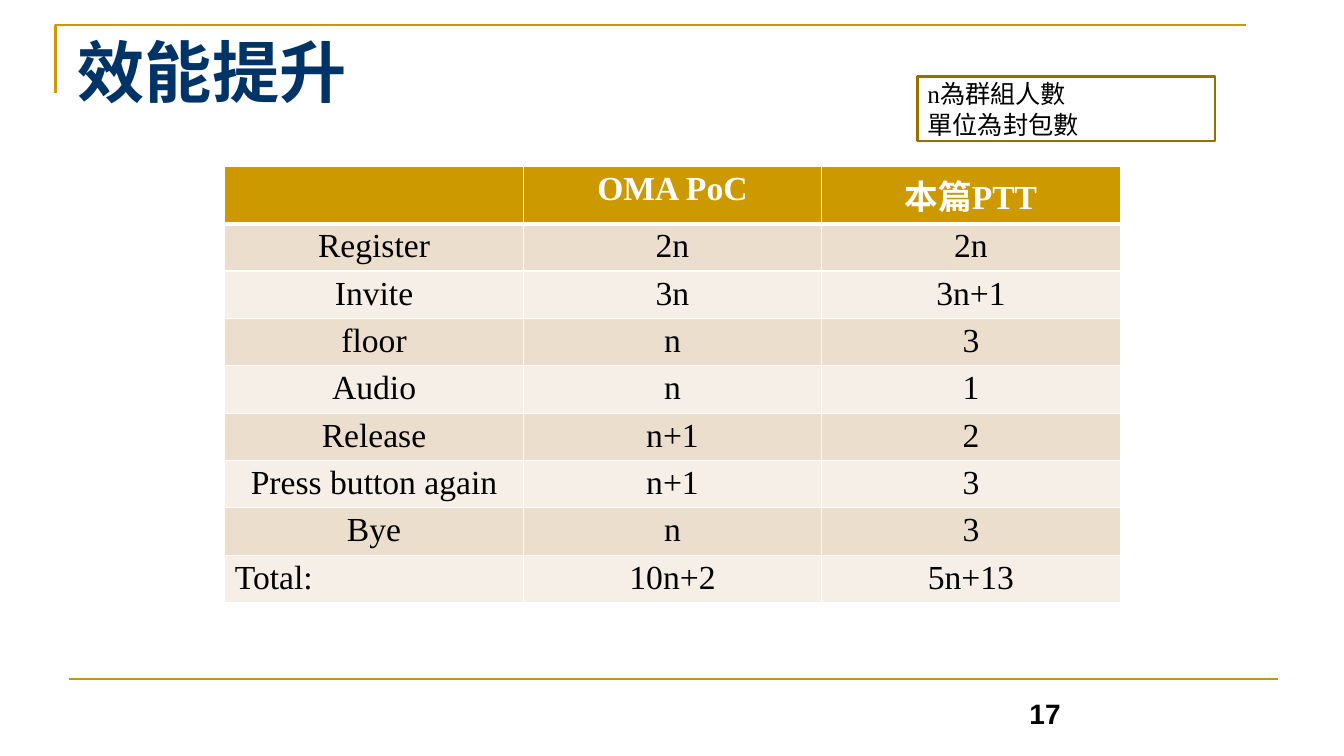
import pptx
import pptx.util
import pptx.oxml
import pptx.oxml.ns
import pptx.dml.color
import pptx.enum.shapes
import pptx.enum.text
from dataclasses import dataclass

Inches, Pt = pptx.util.Inches, pptx.util.Pt
Align, Anchor = pptx.enum.text.PP_ALIGN, pptx.enum.text.MSO_ANCHOR
qn = pptx.oxml.ns.qn


@dataclass(frozen=True)
class Theme:
    gold: str = "CC9900"
    rule: str = "C89600"
    note_line: str = "977100"
    navy: str = "003366"
    black: str = "000000"
    white: str = "FFFFFF"
    bands: tuple = ("ECDECC", "F6EFE7")
    cjk: str = "Noto Sans CJK SC"
    serif: str = "Times New Roman"
    sans: str = "Arial"
    title_size: int = 48
    table_size: int = 24
    number_size: int = 20
    note_size: int = 18


def rgb(value):
    return pptx.dml.color.RGBColor.from_string(value)


def sub(parent, tag, **attributes):
    child = parent.makeelement(qn(tag), attributes)
    parent.append(child)
    return child


class SlideBuilder:
    def __init__(self, presentation, theme):
        self.theme = theme
        self.slide = presentation.slides.add_slide(presentation.slide_layouts[5])
        self.shapes = self.slide.shapes

    def set_text(self, frame, text, size, font, color, bold=False, align=Align.LEFT):
        frame.text = text
        for paragraph in frame.paragraphs:
            paragraph.alignment = align
            for run in paragraph.runs:
                run.font.size = Pt(size)
                run.font.bold = bold
                run.font.name = font
                run.font.color.rgb = rgb(color)
                sub(run._r.get_or_add_rPr(), "a:ea", typeface=self.theme.cjk)

    def title(self, text, left, top, width, height):
        title = self.shapes.title
        title.left, title.top = Inches(left), Inches(top)
        title.width, title.height = Inches(width), Inches(height)
        frame = title.text_frame
        frame.word_wrap = True
        frame.vertical_anchor = Anchor.TOP
        frame.margin_top = 0
        self.set_text(frame, text, self.theme.title_size, self.theme.cjk,
                      self.theme.navy, bold=True)

    def corner(self, points, color, width):
        start, *rest = [(Inches(x), Inches(y)) for x, y in points]
        builder = self.shapes.build_freeform(*start)
        builder.add_line_segments(rest, close=False)
        corner = builder.convert_to_shape()
        corner.shadow.inherit = False
        corner.fill.background()
        corner.line.color.rgb = rgb(color)
        corner.line.width = Pt(width)

    def line(self, start, end, color, width):
        line = self.shapes.add_connector(
            pptx.enum.shapes.MSO_CONNECTOR.STRAIGHT, *map(Inches, start + end))
        line.line.color.rgb = rgb(color)
        line.line.width = Pt(width)
        sub(line._element.spPr, "a:effectLst")

    def box(self, text, left, top, width, height, size, font, fill=None,
            outline=None, bold=False, align=Align.LEFT):
        box = self.shapes.add_shape(
            pptx.enum.shapes.MSO_SHAPE.RECTANGLE,
            *map(Inches, (left, top, width, height)))
        box.shadow.inherit = False
        if fill:
            box.fill.solid()
            box.fill.fore_color.rgb = rgb(fill)
        else:
            box.fill.background()
        if outline:
            box.line.color.rgb = rgb(outline)
            box.line.width = Pt(2)
        else:
            box.line.fill.background()
        box.text_frame.word_wrap = True
        box.text_frame.vertical_anchor = Anchor.MIDDLE
        self.set_text(box.text_frame, text, size, font, self.theme.black, bold, align)

    def borders(self, cell, **widths):
        properties = cell._tc.get_or_add_tcPr()
        for position, side in enumerate("LRTB"):
            border = properties.makeelement(
                qn(f"a:ln{side}"), {"w": str(Pt(widths.get(side, 1)))})
            sub(sub(border, "a:solidFill"), "a:srgbClr", val=self.theme.white)
            properties.insert(position, border)

    def table(self, rows, left, top, column_width, header_height, row_height):
        theme = self.theme
        columns = len(rows[0])
        table = self.shapes.add_table(
            len(rows), columns, Inches(left), Inches(top),
            Inches(column_width * columns),
            Inches(header_height + row_height * (len(rows) - 1))).table
        for column in table.columns:
            column.width = Inches(column_width)
        for r, values in enumerate(rows):
            header = r == 0
            table.rows[r].height = Inches(header_height if header else row_height)
            for c, value in enumerate(values):
                cell = table.cell(r, c)
                cell.margin_top = cell.margin_bottom = Inches(0.04)
                cell.fill.solid()
                cell.fill.fore_color.rgb = rgb(
                    theme.gold if header else theme.bands[(r - 1) % 2])
                self.borders(cell, T=3 if r == 1 else 1, B=3 if header else 1)
                is_total_label = value == "Total:"
                self.set_text(cell.text_frame, value, theme.table_size, theme.serif,
                              theme.white if header else theme.black, header,
                              Align.LEFT if is_total_label else Align.CENTER)


PACKET_COUNTS = [
    ("", "OMA PoC", "本篇PTT"),
    ("Register", "2n", "2n"),
    ("Invite", "3n", "3n+1"),
    ("floor", "n", "3"),
    ("Audio", "n", "1"),
    ("Release", "n+1", "2"),
    ("Press button again", "n+1", "3"),
    ("Bye", "n", "3"),
    ("Total:", "10n+2", "5n+13"),
]


def main():
    theme = Theme()
    presentation = pptx.Presentation()
    presentation.slide_width = Inches(13.33)
    presentation.slide_height = Inches(7.5)
    page = SlideBuilder(presentation, theme)

    # Frame lines and page number
    page.corner([(0.55, 0.92), (0.55, 0.25), (12.36, 0.25)], theme.gold, 1.5)
    page.box("17", 10.06, 6.86, 0.61, 0.44, theme.number_size, theme.sans,
             fill=theme.white, bold=True, align=Align.CENTER)
    page.line((0.68, 6.74), (12.68, 6.74), theme.rule, 1.5)

    # Title
    page.title("效能提升", 0.67, 0.3, 12, 1.25)

    # Packet count comparison
    page.table(PACKET_COUNTS, left=2.23, top=1.65, column_width=2.96,
               header_height=0.57, row_height=0.47)

    # Note on units
    page.box("n為群組人數\n單位為封包數", 9.1, 0.76, 2.95, 0.64,
             theme.note_size, theme.serif, outline=theme.note_line)

    presentation.save("out.pptx")


if __name__ == "__main__":
    main()
